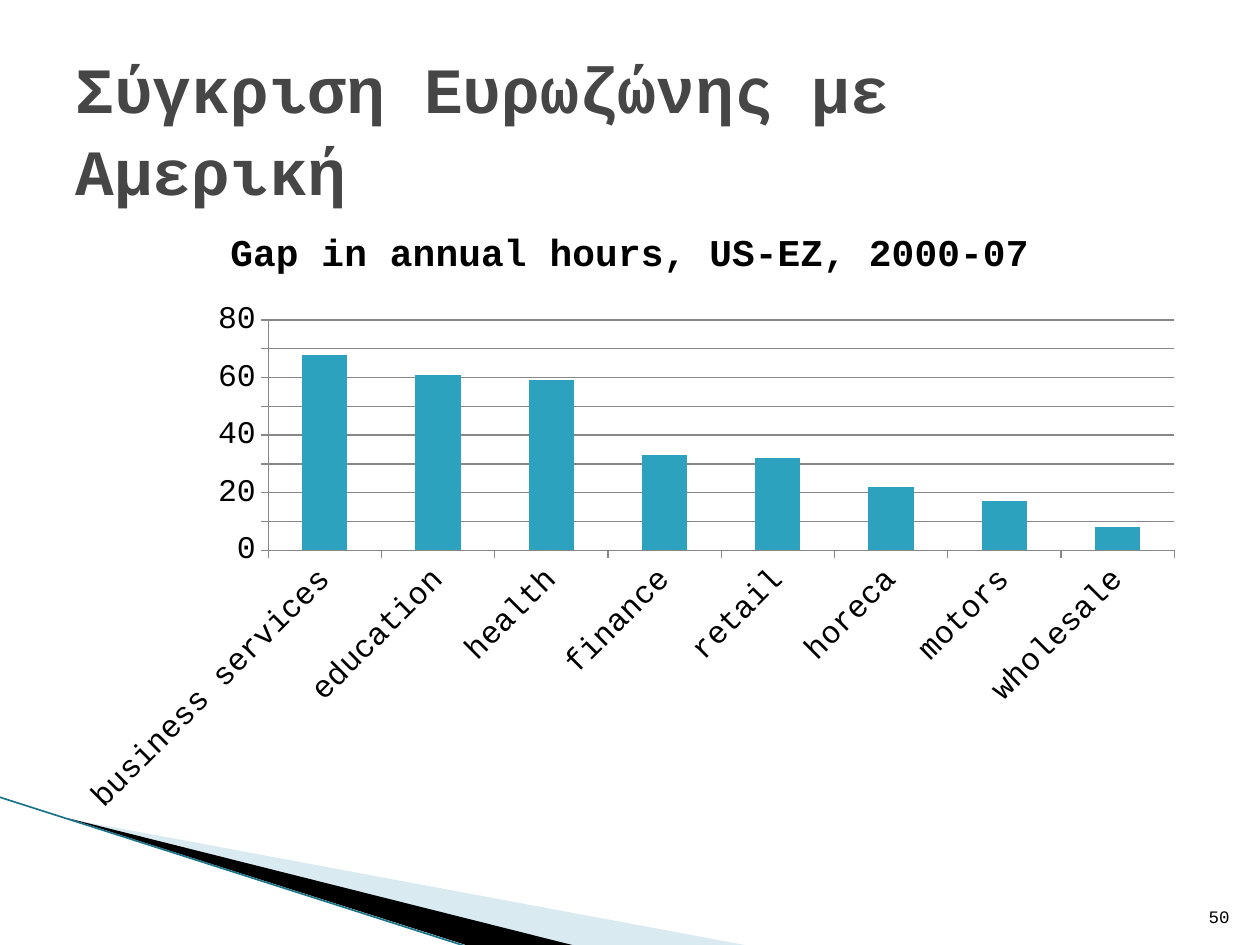
from lxml.etree import SubElement
from pptx import Presentation
from pptx.chart.data import CategoryChartData
from pptx.dml.color import RGBColor
from pptx.enum.chart import XL_CHART_TYPE, XL_TICK_MARK
from pptx.enum.shapes import MSO_CONNECTOR
from pptx.enum.text import MSO_ANCHOR, PP_ALIGN
from pptx.oxml import parse_xml
from pptx.oxml.ns import nsdecls, qn
from pptx.util import Pt

PX = 914400 // 126
FONT = "Courier New"
BLACK = RGBColor(0, 0, 0)
TITLE_GRAY = RGBColor(0x46, 0x46, 0x46)
AXIS_GRAY = RGBColor(0x87, 0x87, 0x87)
BAR_BLUE = RGBColor(0x2D, 0xA2, 0xBF)
PALE_BLUE = RGBColor(0xA0, 0xCB, 0xDC)
EDGE_TEAL = RGBColor(0x1B, 0x74, 0x89)

TITLE = "Σύγκριση Ευρωζώνης με Αμερική"
SLIDE_NUMBER = "50"
CHART_TITLE = "Gap in annual hours, US-EZ, 2000-07"
HOURS_GAP = {
    "business services": 68,
    "education": 61,
    "health": 59,
    "finance": 33,
    "retail": 32,
    "horeca": 22,
    "motors": 17,
    "wholesale": 8,
}

# left, top, width, height in px
TITLE_BOX = (63, 38, 1134, 158)
NUMBER_BOX = (1192, 883, 50, 50)
CHART_BOX = (63, 204, 1134, 624)
PLOT_BOX = (268, 320, 906, 230)

# points in px, fill, opacity in percent
WEDGES = [
    ([(69, 819), (750, 946), (575, 946)], PALE_BLUE, 40),
    ([(67, 818), (576, 946), (469, 946)], BLACK, 100),
]
EDGE_LINE = (-1, 797, 468, 947)


def emu(lengths):
    return [length * PX for length in lengths]


def add_wedge(slide, points, color, opacity):
    builder = slide.shapes.build_freeform(*points[0], scale=PX)
    builder.add_line_segments(points[1:], close=True)
    shape = builder.convert_to_shape()
    shape.shadow.inherit = False
    shape.line.fill.background()
    shape.fill.solid()
    shape.fill.fore_color.rgb = color
    if opacity < 100:
        fill_color = shape.fill._xPr.find(qn("a:solidFill"))[0]
        SubElement(fill_color, qn("a:alpha"), val=str(opacity * 1000))


def add_edge_line(slide):
    line = slide.shapes.add_connector(MSO_CONNECTOR.STRAIGHT, *emu(EDGE_LINE))
    line.line.color.rgb = EDGE_TEAL
    line.line.width = Pt(0.95)
    SubElement(line._element.spPr, qn("a:effectLst"))


def add_text(slide, box, text, size, color, anchor, align, bold=False):
    shape = slide.shapes.add_textbox(*emu(box))
    frame = shape.text_frame
    frame.word_wrap = True
    frame.vertical_anchor = anchor
    paragraph = frame.paragraphs[0]
    paragraph.alignment = align
    run = paragraph.add_run()
    run.text = text
    set_font(run.font, size, color, bold)
    return frame


def set_font(font, size, color=BLACK, bold=False):
    font.name = FONT
    font.size = Pt(size)
    font.bold = bold
    font.color.rgb = color


def place_plot(chart):
    """Fix the inner plot area, as fractions of the chart box."""
    left, top, width, height = CHART_BOX
    x, y, w, h = PLOT_BOX
    fractions = {"x": (x - left) / width, "y": (y - top) / height,
                 "w": w / width, "h": h / height}
    values = "".join(f'<c:{key} val="{value:.3f}"/>' for key, value in fractions.items())
    layout = parse_xml(
        f'<c:layout {nsdecls("c")}><c:manualLayout><c:layoutTarget val="inner"/>'
        f'<c:xMode val="edge"/><c:yMode val="edge"/>{values}</c:manualLayout></c:layout>')
    plot_area = chart._chartSpace.chart.plotArea
    for old_layout in plot_area.findall(qn("c:layout")):
        plot_area.remove(old_layout)
    plot_area.insert(0, layout)


def add_gap_chart(slide):
    data = CategoryChartData()
    data.categories = list(HOURS_GAP)
    data.add_series(CHART_TITLE, list(HOURS_GAP.values()))
    chart = slide.shapes.add_chart(
        XL_CHART_TYPE.COLUMN_CLUSTERED, *emu(CHART_BOX), data).chart
    set_font(chart.font, 18)
    chart.has_legend = False
    chart.has_title = True
    run = chart.chart_title.text_frame.paragraphs[0].add_run()
    run.text = CHART_TITLE
    set_font(run.font, 21.6, bold=True)
    chart.chart_title.include_in_layout = False

    plot = chart.plots[0]
    plot.gap_width = 150
    plot.vary_by_categories = False
    bars = plot.series[0].format.fill
    bars.solid()
    bars.fore_color.rgb = BAR_BLUE

    for axis in (chart.category_axis, chart.value_axis):
        axis.major_tick_mark = XL_TICK_MARK.OUTSIDE
        axis.minor_tick_mark = XL_TICK_MARK.NONE
        axis.format.line.color.rgb = AXIS_GRAY
        set_font(axis.tick_labels.font, 18)
    chart.category_axis._element.txPr.bodyPr.set("rot", "-2700000")
    value_axis = chart.value_axis
    value_axis.minimum_scale = 0
    value_axis.maximum_scale = 80
    value_axis.major_unit = 10
    value_axis.has_major_gridlines = True
    value_axis.major_gridlines.format.line.color.rgb = AXIS_GRAY
    place_plot(chart)


def main():
    presentation = Presentation()
    presentation.slide_width, presentation.slide_height = emu((1260, 945))
    slide = presentation.slides.add_slide(presentation.slide_layouts[6])
    for wedge in WEDGES:
        add_wedge(slide, *wedge)
    add_edge_line(slide)
    add_gap_chart(slide)
    add_text(slide, NUMBER_BOX, SLIDE_NUMBER, 10, BLACK,
             MSO_ANCHOR.BOTTOM, PP_ALIGN.RIGHT)
    title = add_text(slide, TITLE_BOX, TITLE, 36.9, TITLE_GRAY,
                     MSO_ANCHOR.MIDDLE, PP_ALIGN.LEFT, bold=True)
    title.margin_top = 24 * PX
    title.paragraphs[0].line_spacing = 1.07
    presentation.save("out.pptx")


if __name__ == "__main__":
    main()
